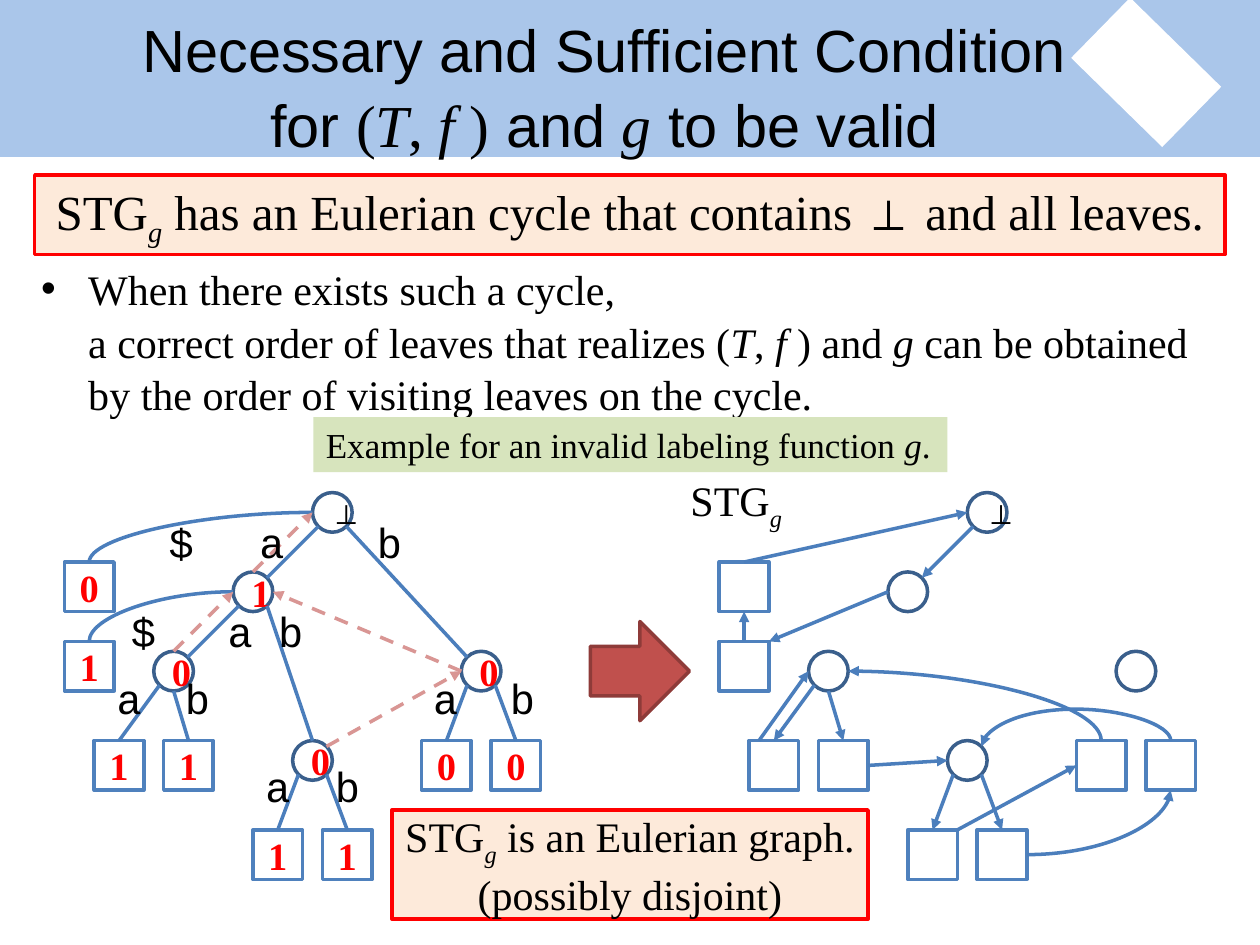
from math import hypot

from lxml import etree
from pptx import Presentation
from pptx.dml.color import RGBColor
from pptx.enum import dml, shapes, text
from pptx.oxml.ns import qn
from pptx.util import Cm, Pt

WHITE = RGBColor(0xFF, 0xFF, 0xFF)
BLACK = RGBColor(0x00, 0x00, 0x00)
RED = RGBColor(0xFF, 0x00, 0x00)
BAND_BLUE = RGBColor(0xAA, 0xC6, 0xEA)
CIRCLE_BLUE = RGBColor(0x3A, 0x5F, 0x8C)
SQUARE_BLUE = RGBColor(0x4F, 0x81, 0xBD)
EDGE_BLUE = RGBColor(0x4B, 0x7E, 0xBC)
LINK_PINK = RGBColor(0xD9, 0x96, 0x94)
ARROW_RED = RGBColor(0xC0, 0x50, 0x4D)
ARROW_EDGE = RGBColor(0x8E, 0x3B, 0x39)
PEACH = RGBColor(0xFD, 0xEA, 0xDA)
GREEN = RGBColor(0xD7, 0xE4, 0xBD)

SERIF, SANS, MONO = "Times New Roman", "Arial", "Courier New"
CENTER, LEFT = text.PP_ALIGN.CENTER, text.PP_ALIGN.LEFT
RECTANGLE, OVAL = shapes.MSO_SHAPE.RECTANGLE, shapes.MSO_SHAPE.OVAL
STRAIGHT, CURVE = shapes.MSO_CONNECTOR.STRAIGHT, shapes.MSO_CONNECTOR.CURVE

presentation = Presentation()
presentation.slide_width, presentation.slide_height = Cm(25.4), Cm(19.05)
slide = presentation.slides.add_slide(presentation.slide_layouts[6])


def write(shape, runs, size, align=CENTER, font=SERIF, color=BLACK, bold=None):
    """Fill a shape with (words, style) runs; style is "", "i", "sub" or a font name."""
    paragraph = shape.text_frame.paragraphs[0]
    paragraph.alignment = align
    paragraph.font.name, paragraph.font.size = font, Pt(size)
    paragraph.font.color.rgb, paragraph.font.bold = color, bold
    for words, style in runs:
        for number, line in enumerate(words.split("\n")):
            if number:
                paragraph.add_line_break()
            run = paragraph.add_run()
            run.text = line
            if style in ("i", "sub"):
                run.font.italic = True
            elif style:
                run.font.name = style
            if style == "sub":
                run.font._element.set("baseline", "-25000")
    return paragraph


def connect(kind, start, end, color=EDGE_BLUE, width=2, arrow=None, dashed=False):
    """Draw a line between two points in cm; arrow is None, "headEnd" or "tailEnd"."""
    connector = slide.shapes.add_connector(kind, *(Cm(v) for v in (*start, *end)))
    connector.line.color.rgb, connector.line.width = color, Pt(width)
    if dashed:
        connector.line.dash_style = dml.MSO_LINE.DASH
    properties = connector._element.spPr
    if arrow:
        etree.SubElement(properties.find(qn("a:ln")), qn("a:" + arrow), type="triangle")
    etree.SubElement(properties, qn("a:effectLst"))
    if kind == CURVE:
        properties.find(qn("a:prstGeom")).set("prst", "curvedConnector2")
    return connector


# Title band with its white corner tile
connect(STRAIGHT, (0, 1.58), (25.4, 1.58), BAND_BLUE, 90)
tile = slide.shapes.add_shape(RECTANGLE, Cm(21.82), Cm(0.61), Cm(2.57), Cm(1.7))
tile.rotation = 44.4
tile.shadow.inherit = False
tile.fill.solid()
tile.fill.fore_color.rgb = WHITE
tile.line.fill.background()

body = slide.shapes.add_textbox(Cm(0.58), Cm(5.13), Cm(24.2), Cm(3.2))
body.text_frame.word_wrap = True
paragraph_properties = body.text_frame.paragraphs[0]._p.get_or_add_pPr()
paragraph_properties.set("marL", str(Cm(0.95)))
paragraph_properties.set("indent", str(-Cm(0.95)))
etree.SubElement(paragraph_properties, qn("a:buFont"), typeface=SANS)
etree.SubElement(paragraph_properties, qn("a:buChar"), char="•")
write(body, [
    ("When there exists such a cycle, \na correct order of leaves that realizes (", ""),
    ("T", "i"), (", ", ""), ("f ", "i"), (") and ", ""), ("g", "i"),
    (" can be obtained by the order of visiting leaves on the cycle.", ""),
], 24, LEFT).line_spacing = 1.05

title = slide.shapes.add_textbox(Cm(0.58), Cm(0.41), Cm(23.22), Cm(2.6))
title.text_frame.word_wrap = True
title.text_frame.vertical_anchor = text.MSO_ANCHOR.MIDDLE
write(title, [
    ("Necessary and Sufficient Condition\nfor ", SANS), ("(", ""), ("T", "i"),
    (", ", ""), ("f", "i"), (" )", ""), (" and ", SANS), ("g", "i"),
    (" to be valid", SANS),
], 34).line_spacing = 1.05

# Tree nodes, named by the labels on the way from the root: left, top, bit
CIRCLES = {
    "": (6.3, 9.93, "⊥"), "a": (4.7, 11.53, "1"), "aa": (3.1, 13.13, "0"),
    "ab": (5.9, 14.93, "0"), "b": (9.3, 13.13, "0"),
}
SQUARES = {
    "$": (1.3, 11.33, "0"), "a$": (1.3, 12.93, "1"),
    "aaa": (1.9, 14.93, "1"), "aab": (3.3, 14.93, "1"),
    "aba": (5.1, 16.73, "1"), "abb": (6.5, 16.73, "1"),
    "ba": (8.5, 14.93, "0"), "bb": (9.9, 14.93, "0"),
}
DIRECTIONS = {
    "N": (0, -1), "NE": (1, -1), "E": (1, 0), "SE": (1, 1), "S": (0, 1),
    "SW": (-1, 1), "W": (-1, 0), "NW": (-1, -1), "NNW": (-0.6, -1),
}
GRAPH_SHIFT = 13.2

points = {}
for side, shift in (("tree", 0), ("graph", GRAPH_SHIFT)):
    for nodes, preset, size, color in (
        (CIRCLES, OVAL, 0.8, CIRCLE_BLUE), (SQUARES, RECTANGLE, 1, SQUARE_BLUE),
    ):
        for name, (left, top, bit) in nodes.items():
            node = slide.shapes.add_shape(preset, Cm(left + shift), Cm(top), Cm(size), Cm(size))
            node.shadow.inherit = False
            node.fill.solid()
            node.fill.fore_color.rgb = WHITE
            node.line.color.rgb, node.line.width = color, Pt(2)
            node.text_frame.word_wrap = preset == OVAL
            if name == "":
                write(node, [(bit, "")], 18)
            elif side == "tree":
                write(node, [(bit, "")], 22, color=RED, bold=True)
            for direction, (dx, dy) in DIRECTIONS.items():
                reach = size / 2 / (hypot(dx, dy) if preset == OVAL else 1)
                points[side, name, direction] = (
                    left + shift + size / 2 + reach * dx, top + size / 2 + reach * dy)

TREE_EDGES = [
    ("", "SW", "a", "NE"), ("", "SE", "b", "NW"), ("a", "SW", "aa", "NE"),
    ("a", "SE", "ab", "N"), ("aa", "SW", "aaa", "N"), ("aa", "S", "aab", "N"),
    ("ab", "SW", "aba", "N"), ("ab", "SE", "abb", "N"),
    ("b", "SW", "ba", "N"), ("b", "SE", "bb", "N"),
]
TREE_CURVES = [("", "W", "$", "N"), ("a", "W", "a$", "N")]
SUFFIX_LINKS = [
    ("ab", "NE", "b", "W"), ("a", "N", "", "W"), ("b", "W", "a", "E"), ("aa", "N", "a", "W"),
]
GRAPH_EDGES = [
    ("", "SW", "a", "NE"), ("a", "W", "a$", "NE"), ("a$", "N", "$", "S"),
    ("$", "N", "", "W"), ("aa", "SW", "aaa", "N"), ("aaa", "NNW", "aa", "W"),
    ("aa", "S", "aab", "N"), ("aab", "E", "ab", "W"), ("ab", "SW", "aba", "N"),
    ("ab", "SE", "abb", "N"), ("aba", "NE", "ba", "W"),
]
for side, kind, edges, color, arrow, dashed in (
    ("tree", STRAIGHT, TREE_EDGES, EDGE_BLUE, None, False),
    ("tree", CURVE, TREE_CURVES, EDGE_BLUE, None, False),
    ("tree", STRAIGHT, SUFFIX_LINKS, LINK_PINK, "tailEnd", True),
    ("graph", STRAIGHT, GRAPH_EDGES, EDGE_BLUE, "tailEnd", False),
    ("graph", CURVE, [("abb", "E", "bb", "S")], EDGE_BLUE, "tailEnd", False),
    ("graph", CURVE, [("aa", "E", "ba", "N")], EDGE_BLUE, "headEnd", False),
):
    for start, start_side, end, end_side in edges:
        connect(kind, points[side, start, start_side], points[side, end, end_side],
                color, arrow=arrow, dashed=dashed)

# The arc over two nodes is a three-part curve turned by a quarter
(x1, y1), (x2, y2) = points["graph", "ab", "NE"], points["graph", "bb", "N"]
middle_x, middle_y = (x1 + x2) / 2, (y1 + y2) / 2
half_x, half_y = (x2 - x1) / 2, (y1 - y2) / 2
arc = connect(CURVE, (middle_x + half_y, middle_y + half_x),
              (middle_x - half_y, middle_y - half_x), arrow="headEnd")
arc._element.spPr.find(qn("a:xfrm")).set("rot", "5400000")
geometry = arc._element.spPr.find(qn("a:prstGeom"))
geometry.set("prst", "curvedConnector3")
etree.SubElement(geometry.find(qn("a:avLst")), qn("a:gd"), name="adj1", fmla="val 642000")

EDGE_LABELS = [
    ("$", 3.15, 10.29), ("a", 4.98, 10.29), ("b", 7.35, 10.29),
    ("$", 2.39, 12.09), ("a", 4.34, 12.09), ("b", 5.36, 12.09),
    ("a", 2.1, 13.43), ("b", 3.48, 13.43), ("a", 8.48, 13.43), ("b", 10.03, 13.43),
    ("a", 5.1, 15.21), ("b", 6.5, 15.21),
]
for letter, left, top in EDGE_LABELS:
    label = slide.shapes.add_textbox(Cm(left), Cm(top), Cm(1.02), Cm(1.27))
    label.text_frame.word_wrap = False
    write(label, [(letter, "")], 24, LEFT, MONO)

graph_name = slide.shapes.add_textbox(Cm(13.67), Cm(9.45), Cm(2.41), Cm(1.27))
graph_name.text_frame.word_wrap = False
write(graph_name, [("STG", ""), ("g", "sub")], 24, LEFT)

# Big arrow and the three text panels
for preset, box, fill, line, runs, size, align in (
    (shapes.MSO_SHAPE.RIGHT_ARROW, (11.9, 12.53, 2, 2), ARROW_RED, ARROW_EDGE, [], 18, CENTER),
    (RECTANGLE, (6.32, 8.41, 12.78, 1.11), GREEN, None,
     [("Example for an invalid labeling function ", ""), ("g", "i"), (".", "")], 20, LEFT),
    (RECTANGLE, (0.7, 3.53, 24, 1.6), PEACH, RED,
     [("STG", ""), ("g", "sub"),
      (" has an Eulerian cycle that contains ⊥ and all leaves.", "")], 28, CENTER),
    (RECTANGLE, (7.9, 16.33, 9.6, 2.2), PEACH, RED,
     [("STG", ""), ("g", "sub"), (" is an Eulerian graph.\n(possibly disjoint)", "")], 24, CENTER),
):
    panel = slide.shapes.add_shape(preset, *(Cm(v) for v in box))
    panel.shadow.inherit = False
    panel.fill.solid()
    panel.fill.fore_color.rgb = fill
    if line:
        panel.line.color.rgb, panel.line.width = line, Pt(2)
    else:
        panel.line.fill.background()
    if runs:
        write(panel, runs, size, align)

presentation.save("out.pptx")
